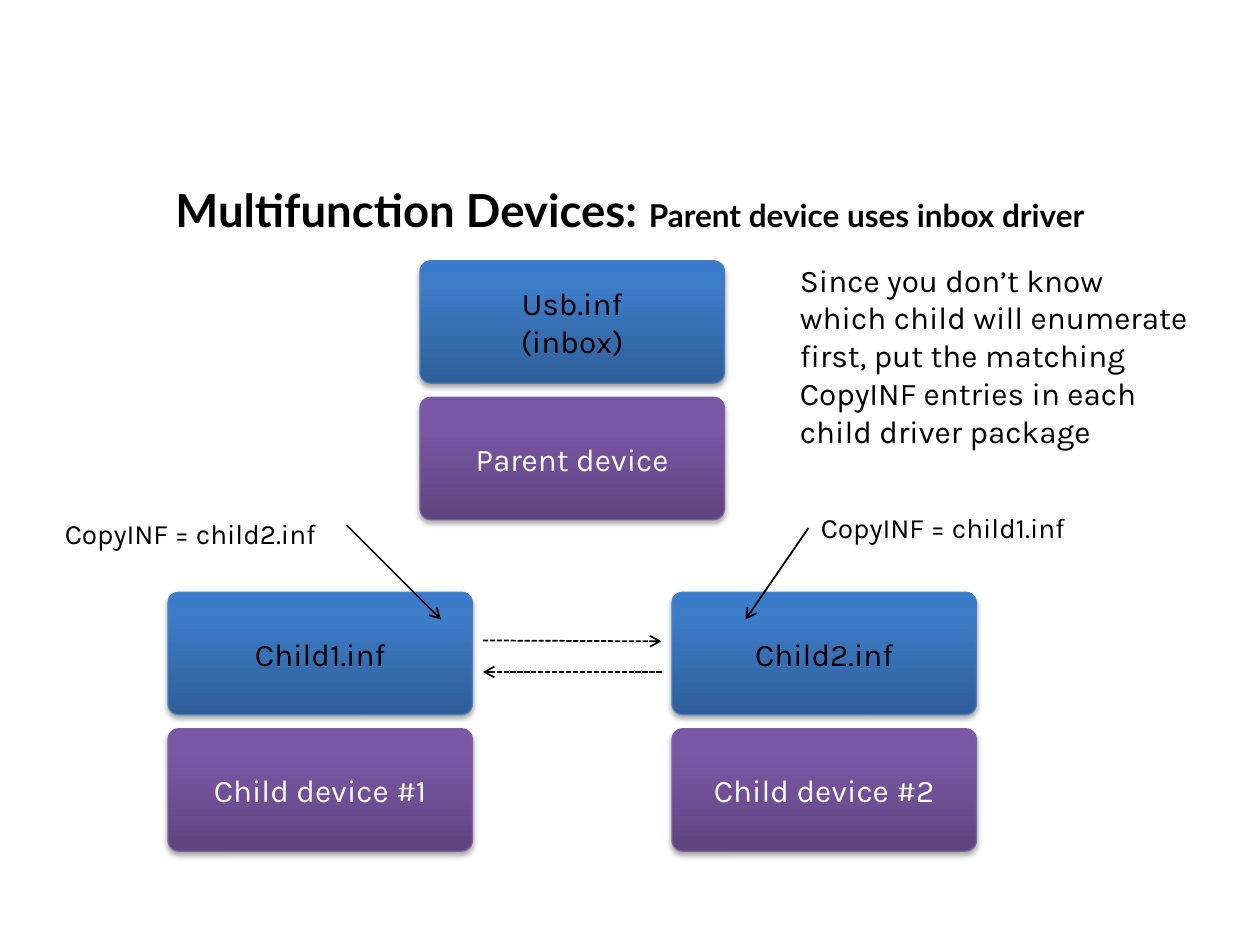
from copy import deepcopy
from dataclasses import dataclass

from lxml import etree
from pptx import Presentation
from pptx.dml.color import RGBColor
from pptx.enum.dml import MSO_LINE
from pptx.enum.shapes import MSO_CONNECTOR, MSO_SHAPE
from pptx.enum.text import MSO_ANCHOR, MSO_AUTO_SIZE, PP_ALIGN
from pptx.oxml.ns import qn
from pptx.util import Pt

ROUNDED = MSO_SHAPE.ROUNDED_RECTANGLE
STRAIGHT = MSO_CONNECTOR.STRAIGHT
DASHED = MSO_LINE.SQUARE_DOT
MIDDLE = MSO_ANCHOR.MIDDLE
GROW = MSO_AUTO_SIZE.SHAPE_TO_FIT_TEXT
FIXED = MSO_AUTO_SIZE.NONE
LEFT = PP_ALIGN.LEFT
CENTER = PP_ALIGN.CENTER
TITLE_ONLY = 5


@dataclass(frozen=True)
class BoxStyle:
    stops: tuple
    line: str
    text: str


@dataclass(frozen=True)
class Theme:
    heading_font: str = "Lato"
    body_font: str = "Karla"
    ink: str = "000000"
    title_size: float = 26
    body_size: float = 18
    label_size: float = 16
    driver: BoxStyle = BoxStyle(("2F5F99", "3D7CC7", "3A7CCB"), "4B7EBC", "000000")
    device: BoxStyle = BoxStyle(("5F4480", "7B58A6", "7C57A8"), "7D60A0", "FFFFFF")


class SlideBuilder:
    def __init__(self, slide, theme):
        self.slide = slide
        self.theme = theme

    def format_run(self, run, size, color, font, bold=False):
        run.font.size = Pt(size)
        run.font.name = font
        run.font.bold = bold
        run.font.color.rgb = RGBColor.from_string(color)

    def fill_text(self, text_frame, text, size, color, alignment):
        text_frame.word_wrap = True
        text_frame.text = text
        for paragraph in text_frame.paragraphs:
            paragraph.alignment = alignment
            for run in paragraph.runs:
                self.format_run(run, size, color, self.theme.body_font)

    def title(self, heading, subheading, left, top, width, height):
        shape = self.slide.shapes.title
        shape.left, shape.top = Pt(left), Pt(top)
        shape.width, shape.height = Pt(width), Pt(height)
        text_frame = shape.text_frame
        text_frame.text = heading
        text_frame.auto_size = FIXED
        text_frame.vertical_anchor = MIDDLE
        paragraph = text_frame.paragraphs[0]
        paragraph.alignment = CENTER
        paragraph.add_run().text = subheading
        sizes = (self.theme.title_size, self.theme.body_size)
        for run, size in zip(paragraph.runs, sizes):
            self.format_run(run, size, self.theme.ink, self.theme.heading_font, True)

    def gradient(self, shape, colors):
        shape.fill.gradient()
        shape.fill.gradient_angle = 90
        stop_list = shape._element.spPr.find(".//" + qn("a:gsLst"))
        stop_list.append(deepcopy(stop_list[-1]))
        for stop, position, color in zip(shape.fill.gradient_stops, (0, 0.8, 1), colors):
            stop.position = position
            stop.color.rgb = RGBColor.from_string(color)

    def soft_shadow(self, shape):
        shape.shadow.inherit = False
        effects = shape._element.spPr.find(qn("a:effectLst"))
        shadow = etree.SubElement(
            effects, qn("a:outerShdw"), blurRad=str(Pt(3.1)), dist=str(Pt(1.8)),
            dir="5400000", rotWithShape="0",
        )
        color = etree.SubElement(shadow, qn("a:srgbClr"), val=self.theme.ink)
        etree.SubElement(color, qn("a:alpha"), val="35000")

    def box(self, text, style, left, top, width, height):
        shape = self.slide.shapes.add_shape(ROUNDED, Pt(left), Pt(top), Pt(width), Pt(height))
        shape.adjustments[0] = 0.09
        self.gradient(shape, style.stops)
        shape.line.color.rgb = RGBColor.from_string(style.line)
        shape.line.width = Pt(0.75)
        self.soft_shadow(shape)
        shape.text_frame.vertical_anchor = MIDDLE
        self.fill_text(shape.text_frame, text, self.theme.body_size, style.text, CENTER)

    def note(self, text, size, left, top, width, height):
        shape = self.slide.shapes.add_textbox(Pt(left), Pt(top), Pt(width), Pt(height))
        self.fill_text(shape.text_frame, text, size, self.theme.ink, LEFT)
        shape.text_frame.auto_size = GROW

    def arrow(self, start, end, dashed=False):
        connector = self.slide.shapes.add_connector(
            STRAIGHT, *(Pt(value) for value in (*start, *end))
        )
        connector.line.color.rgb = RGBColor.from_string(self.theme.ink)
        connector.line.width = Pt(1)
        if dashed:
            connector.line.dash_style = DASHED
        properties = connector._element.spPr
        etree.SubElement(properties.find(qn("a:ln")), qn("a:tailEnd"), type="arrow")
        etree.SubElement(properties, qn("a:effectLst"))


def main():
    presentation = Presentation()
    presentation.slide_width, presentation.slide_height = Pt(720), Pt(540)
    slide = presentation.slides.add_slide(presentation.slide_layouts[TITLE_ONLY])
    theme = Theme()
    builder = SlideBuilder(slide, theme)

    builder.title("Multifunction Devices: ", "Parent device uses inbox driver", 36, 90, 648, 59)

    box_width, box_height, driver_to_device = 174, 70, 78
    stacks = (
        ("Usb.inf\n(inbox)", "Parent device", 240, 149),
        ("Child1.inf", "Child device #1", 96, 338.4),
        ("Child2.inf", "Child device #2", 384, 338.4),
    )
    for driver, device, left, top in stacks:
        builder.box(device, theme.device, left, top + driver_to_device, box_width, box_height)
        builder.box(driver, theme.driver, left, top, box_width, box_height)

    builder.note(
        "Since you don’t know \vwhich child will enumerate first, put the matching "
        "CopyINF entries in each child driver package",
        theme.body_size, 450, 145.4, 240, 116.6,
    )
    builder.note("CopyINF = child1.inf", theme.label_size, 462, 288, 240, 26.6)
    builder.note("CopyINF = child2.inf", theme.label_size, 30, 291.6, 240, 26.6)

    builder.arrow((462, 301.7), (426, 354))
    builder.arrow((198, 300), (252, 354))
    builder.arrow((276, 366), (378, 366.5), dashed=True)
    builder.arrow((378, 384), (276, 384), dashed=True)

    presentation.save("out.pptx")


if __name__ == "__main__":
    main()
